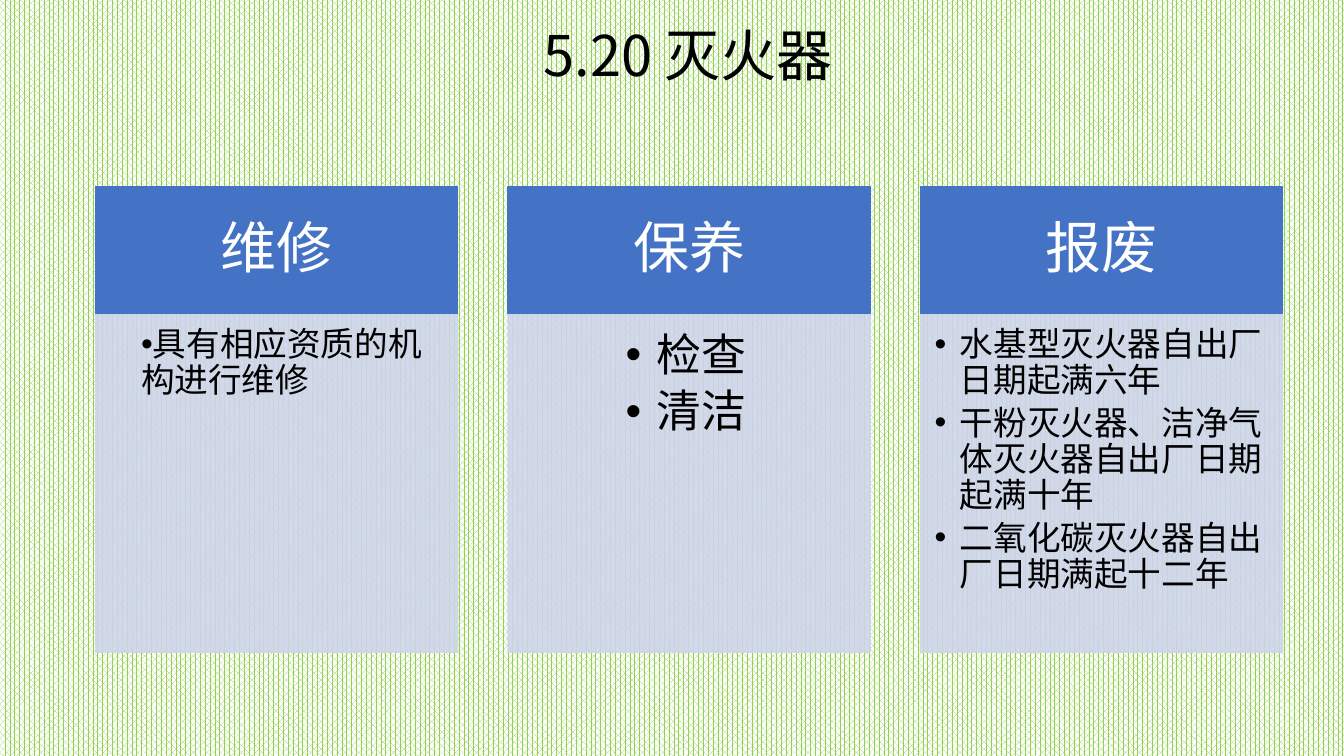
from dataclasses import dataclass

from lxml.etree import SubElement
from pptx import Presentation
from pptx.dml.color import RGBColor
from pptx.enum.dml import MSO_PATTERN
from pptx.enum.shapes import MSO_SHAPE
from pptx.enum.text import MSO_ANCHOR, MSO_AUTO_SIZE, PP_ALIGN
from pptx.oxml.ns import qn
from pptx.util import Inches, Pt


@dataclass(frozen=True)
class Theme:
    font: str = "Noto Sans CJK SC"
    stripe: str = "92D050"
    header: str = "4472C4"
    panel: str = "CFD5EA"
    dark: str = "000000"
    light: str = "FFFFFF"
    heading_size: int = 40
    large_size: int = 32
    list_size: int = 24
    panel_opacity: int = 90


@dataclass(frozen=True)
class Column:
    heading: str
    items: tuple
    size: int
    align: PP_ALIGN
    margin: float
    hanging: float
    insets: tuple


class SlideBuilder:
    def __init__(self, slide, theme):
        self.slide = slide
        self.theme = theme

    def background(self):
        fill = self.slide.background.fill
        fill.patterned()
        fill.pattern = MSO_PATTERN.PERCENT_70
        fill.fore_color.rgb = RGBColor.from_string(self.theme.stripe)
        fill.back_color.rgb = RGBColor.from_string(self.theme.light)

    def place(self, shape, left, top, width, height):
        shape.left, shape.top = Inches(left), Inches(top)
        shape.width, shape.height = Inches(width), Inches(height)

    def paint(self, shape, color, opacity=100):
        shape.fill.solid()
        shape.line.fill.solid()
        shape.line.width = Pt(1)
        for fill in (shape.fill, shape.line.fill):
            fill.fore_color.rgb = RGBColor.from_string(color)
        if opacity < 100:
            for element in shape._element.spPr.iter(qn("a:srgbClr")):
                SubElement(element, qn("a:alpha"), val=str(opacity * 1000))

    def frame(self, shape, anchor, insets):
        frame = shape.text_frame
        frame.word_wrap = True
        frame.auto_size = MSO_AUTO_SIZE.NONE
        frame.vertical_anchor = anchor
        (frame.margin_left, frame.margin_top,
         frame.margin_right, frame.margin_bottom) = map(Inches, insets)
        return frame

    def format(self, paragraph, size, color, align):
        paragraph.alignment = align
        paragraph.line_spacing = 0.9
        paragraph.space_before = Pt(0)
        font = paragraph.font
        font.name = self.theme.font
        font.size = Pt(size)
        font.bold = False
        font.color.rgb = RGBColor.from_string(color)
        properties = paragraph._p.pPr.find(qn("a:defRPr"))
        SubElement(properties, qn("a:ea"), typeface=self.theme.font)

    def bullet(self, paragraph, margin, hanging):
        properties = paragraph._p.get_or_add_pPr()
        properties.set("marL", str(Inches(margin)))
        properties.set("indent", str(-Inches(hanging)))
        mark = SubElement(properties, qn("a:buChar"), char="•")
        properties.find(qn("a:defRPr")).addprevious(mark)

    def title(self, text, *box):
        title = self.slide.shapes.title
        self.place(title, *box)
        frame = self.frame(title, MSO_ANCHOR.TOP, (0.1, 0.05, 0.1, 0.05))
        frame.text = text
        self.format(frame.paragraphs[0], self.theme.heading_size,
                    self.theme.dark, PP_ALIGN.CENTER)

    def header(self, text, *box):
        shape = self.slide.shapes.add_shape(MSO_SHAPE.RECTANGLE, *map(Inches, box))
        shape.shadow.inherit = False
        self.paint(shape, self.theme.header)
        frame = self.frame(shape, MSO_ANCHOR.MIDDLE, (0.31, 0.18, 0.31, 0.18))
        frame.text = text
        self.format(frame.paragraphs[0], self.theme.heading_size,
                    self.theme.light, PP_ALIGN.CENTER)

    def panel(self, placeholder, column, *box):
        self.place(placeholder, *box)
        self.paint(placeholder, self.theme.panel, self.theme.panel_opacity)
        frame = self.frame(placeholder, MSO_ANCHOR.TOP, column.insets)
        frame.text = "\n".join(column.items)
        for paragraph in frame.paragraphs:
            paragraph.level = 1
            self.format(paragraph, column.size, self.theme.dark, column.align)
            paragraph.space_after = Pt(column.size * 0.18)
            self.bullet(paragraph, column.margin, column.hanging)


def main():
    theme = Theme()
    presentation = Presentation()
    presentation.slide_width = Inches(13.33)
    presentation.slide_height = Inches(7.5)
    comparison_layout = presentation.slide_layouts[4]
    slide = presentation.slides.add_slide(comparison_layout)
    builder = SlideBuilder(slide, theme)
    builder.background()
    builder.title("5.20 灭火器", 1.29, 0.23, 11.07, 0.94)

    narrow_insets = (0.14, 0.14, 0.19, 0.21)
    columns = [
        Column("维修", ("具有相应资质的机构进行维修",),
               theme.list_size, PP_ALIGN.LEFT, 0.31, 0, narrow_insets),
        Column("保养", ("检查", "清洁"),
               theme.large_size, PP_ALIGN.CENTER, 0.31, 0.31,
               (0.19, 0.19, 0.25, 0.28)),
        Column("报废", ("水基型灭火器自出厂日期起满六年",
                      "干粉灭火器、洁净气体灭火器自出厂日期起满十年",
                      "二氧化碳灭火器自出厂日期满起十二年"),
               theme.list_size, PP_ALIGN.LEFT, 0.25, 0.25, narrow_insets),
    ]
    left, top, width, pitch = 0.95, 1.85, 3.59, 4.09
    header_height, panel_height = 1.26, 3.36
    title, *bodies = list(slide.placeholders)
    for index, (column, body) in enumerate(zip(columns, bodies)):
        column_left = left + index * pitch
        builder.header(column.heading, column_left, top, width, header_height)
        builder.panel(body, column, column_left, top + header_height,
                      width, panel_height)
    for spare in bodies[len(columns):]:
        spare._element.getparent().remove(spare._element)

    presentation.save("out.pptx")


if __name__ == "__main__":
    main()
